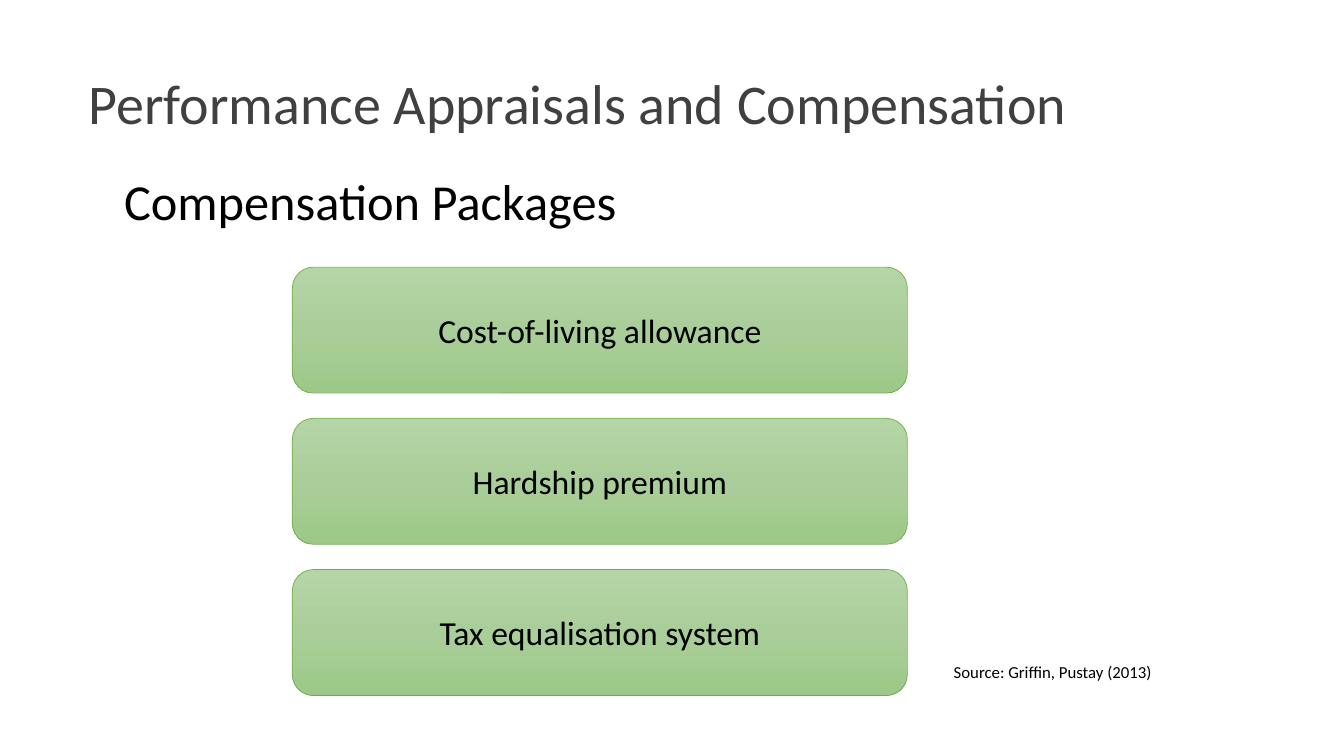
"""Build the compensation packages slide."""
import copy

import pptx
import pptx.dml.color
import pptx.enum.shapes
import pptx.enum.text
import pptx.util

Inches = pptx.util.Inches
ANCHOR = pptx.enum.text.MSO_ANCHOR
ALIGN = pptx.enum.text.PP_ALIGN

HEADING = "Performance Appraisals and Compensation"
TITLE = "Compensation Packages"
PACKAGES = ["Cost-of-living allowance", "Hardship premium", "Tax equalisation system"]
SOURCE = "Source: Griffin, Pustay (2013)"

FONT = "Calibri"
COLORS = {"text": "000000", "heading": "404041", "line": "70AD47",
          "top": "B5D5A7", "middle": "AACE9A", "bottom": "9CC987"}
CARD_LEFT, CARD_TOP, CARD_WIDTH, CARD_HEIGHT = 2.9, 2.65, 6.1, 1.25
CARD_GAP = 0.25


def rgb(name):
    """Return the named colour."""
    return pptx.dml.color.RGBColor.from_string(COLORS[name])


def write(sp, text, size, color="text", align=ALIGN.LEFT, anchor=ANCHOR.TOP, wrap=True):
    """Put one formatted paragraph into a shape."""
    tf = sp.text_frame
    tf.text = text
    tf.word_wrap = wrap
    tf.vertical_anchor = anchor
    p = tf.paragraphs[0]
    p.alignment = align
    font = p.runs[0].font
    font.name, font.size = FONT, pptx.util.Pt(size)
    font.color.rgb = rgb(color)
    return tf


def add_text(slide, box, text, size, color="text"):
    """Add a text box and return its text frame."""
    sp = slide.shapes.add_textbox(*map(Inches, box))
    return write(sp, text, size, color)


def fill_gradient(sp):
    """Fill a shape with the three-stop green gradient, top to bottom."""
    sp.fill.gradient()
    sp.fill.gradient_angle = 270
    stops = sp.fill._fill._gradFill.gsLst
    stops.insert(1, copy.deepcopy(stops[0]))
    for i, name in enumerate(("top", "middle", "bottom")):
        stops[i].set("pos", str(i * 50000))
        sp.fill.gradient_stops[i].color.rgb = rgb(name)


def add_card(slide, index, text):
    """Add one rounded card to the column."""
    top = CARD_TOP + index * (CARD_HEIGHT + CARD_GAP)
    sp = slide.shapes.add_shape(
        pptx.enum.shapes.MSO_SHAPE.ROUNDED_RECTANGLE,
        *map(Inches, (CARD_LEFT, top, CARD_WIDTH, CARD_HEIGHT)))
    sp.adjustments[0] = 0.167
    sp.shadow.inherit = False
    fill_gradient(sp)
    sp.line.color.rgb = rgb("line")
    sp.line.width = pptx.util.Pt(0.5)
    write(sp, text, 24, align=ALIGN.CENTER, anchor=ANCHOR.MIDDLE, wrap=False)


def main():
    """Create and save the slide."""
    prs = pptx.Presentation()
    prs.slide_width, prs.slide_height = Inches(13.33), Inches(7.5)
    slide = prs.slides.add_slide(prs.slide_layouts[5])

    title = slide.shapes.title
    title.left, title.top, title.width, title.height = map(Inches, (1.13, 1.4, 9, 1.25))
    tf = write(title, TITLE, 36, anchor=ANCHOR.MIDDLE)
    tf.paragraphs[0].line_spacing = 0.9

    for i, text in enumerate(PACKAGES):
        add_card(slide, i, text)

    tf = add_text(slide, (0.88, 0.68, 10.3, 0.59), HEADING, 40, "heading")
    tf.margin_left = tf.margin_top = tf.margin_right = tf.margin_bottom = 0
    tf = add_text(slide, (9.36, 6.52, 3.41, 0.3), SOURCE, 12)
    tf.auto_size = pptx.enum.text.MSO_AUTO_SIZE.SHAPE_TO_FIT_TEXT

    prs.save("out.pptx")


if __name__ == "__main__":
    main()
